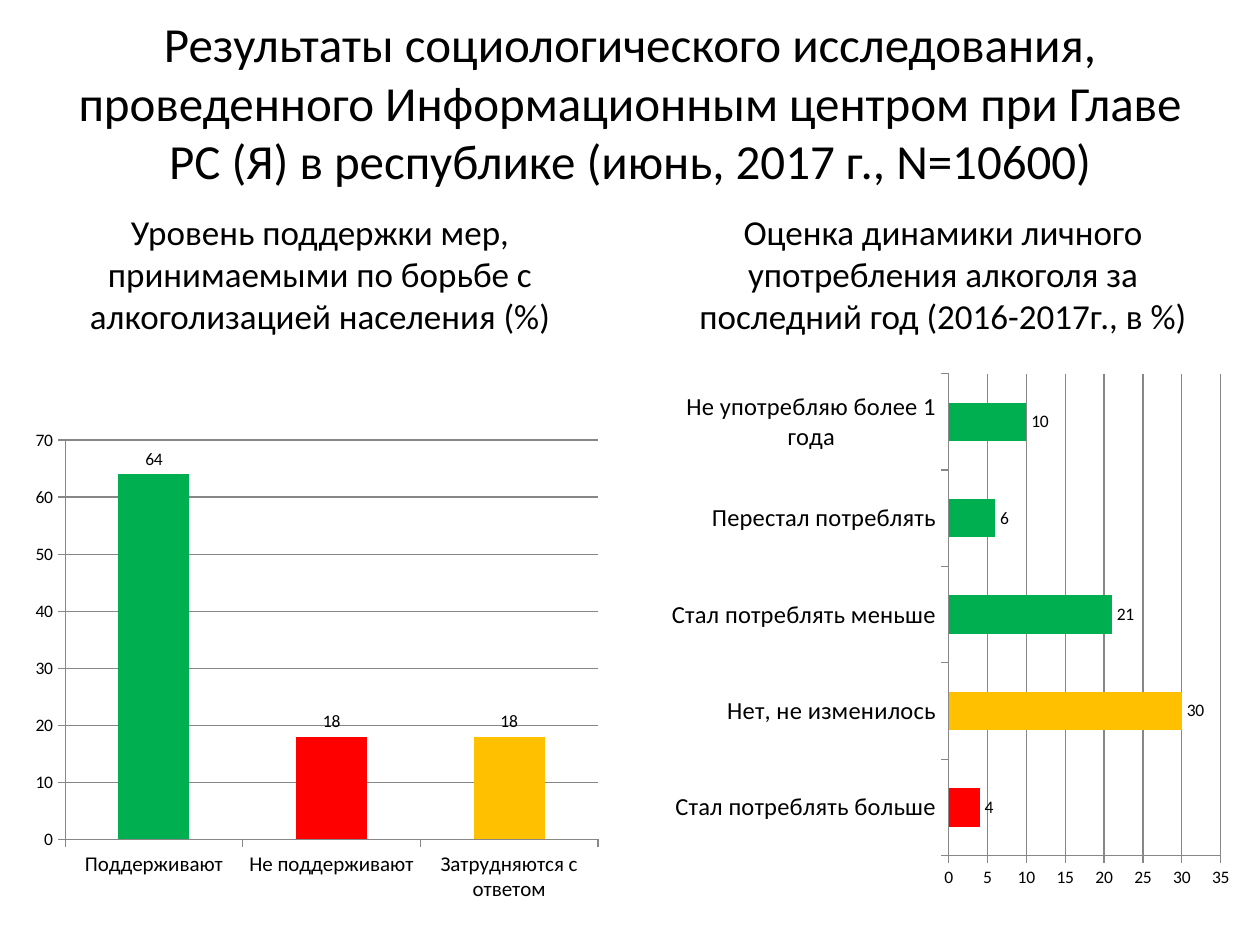
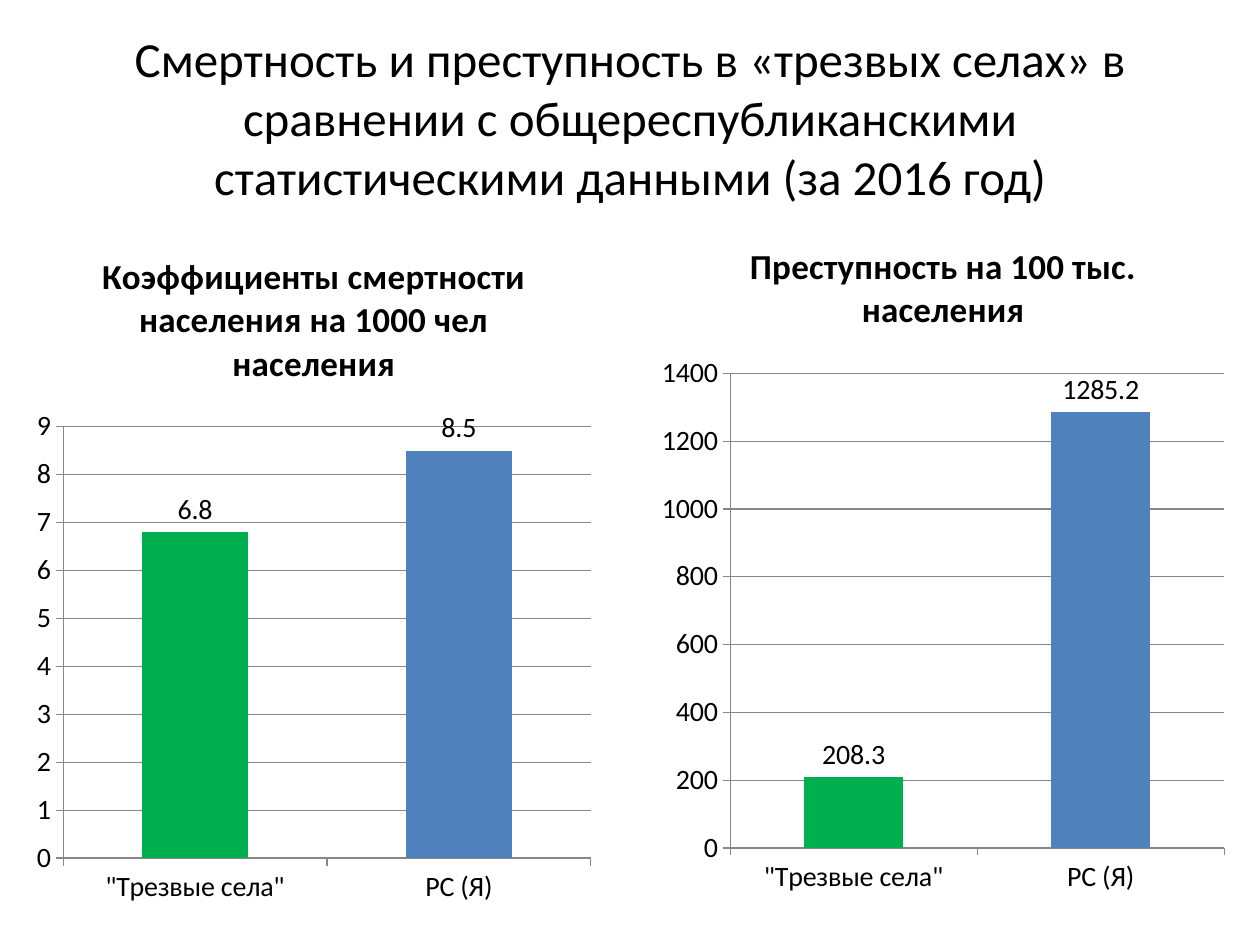
from dataclasses import dataclass

from lxml.etree import SubElement
from pptx import Presentation
from pptx.chart.data import CategoryChartData
from pptx.dml.color import RGBColor
from pptx.enum.chart import XL_CHART_TYPE, XL_LABEL_POSITION, XL_TICK_MARK
from pptx.enum.text import MSO_ANCHOR, MSO_AUTO_SIZE, PP_ALIGN
from pptx.oxml.ns import qn
from pptx.util import Pt


@dataclass(frozen=True)
class Theme:
    font: str = "Calibri"
    text: RGBColor = RGBColor(0, 0, 0)
    background: RGBColor = RGBColor(255, 255, 255)
    grid: RGBColor = RGBColor(0x87, 0x87, 0x87)
    blue: RGBColor = RGBColor(0x4F, 0x81, 0xBD)
    green: RGBColor = RGBColor(0x00, 0xB0, 0x50)
    red: RGBColor = RGBColor(0xFF, 0x00, 0x00)
    amber: RGBColor = RGBColor(0xFF, 0xC0, 0x00)
    title_size: int = 28
    heading_size: int = 20
    comparison_size: int = 16
    survey_size: int = 10
    line_width: float = 0.75


THEME = Theme()
TITLE_LEFT, TITLE_TOP, TITLE_WIDTH = 36, 21.6, 648
HEADING_TOP = 116.6


def style_font(font, size, bold=False):
    font.name = THEME.font
    font.size = Pt(size)
    font.bold = bold
    font.color.rgb = THEME.text


def add_slide(presentation):
    slide = presentation.slides.add_slide(presentation.slide_layouts[6])
    slide.background.fill.solid()
    slide.background.fill.fore_color.rgb = THEME.background
    return slide


def add_text(slide, box, text, size, anchor=MSO_ANCHOR.TOP, space_before=0):
    shape = slide.shapes.add_textbox(*map(Pt, box))
    frame = shape.text_frame
    frame.word_wrap = True
    frame.auto_size = MSO_AUTO_SIZE.NONE
    frame.vertical_anchor = anchor
    paragraph = frame.paragraphs[0]
    paragraph.alignment = PP_ALIGN.CENTER
    paragraph.space_before = Pt(space_before)
    run = paragraph.add_run()
    run.text = text
    style_font(run.font, size)


def add_title(slide, text, height):
    box = (TITLE_LEFT, TITLE_TOP, TITLE_WIDTH, height)
    add_text(slide, box, text, THEME.title_size, MSO_ANCHOR.MIDDLE)


def add_heading(slide, left, width, height, text):
    box = (left, HEADING_TOP, width, height)
    add_text(slide, box, text, THEME.heading_size, space_before=2)


def style_line(line):
    line.color.rgb = THEME.grid
    line.width = Pt(THEME.line_width)


def style_axes(chart, maximum, step, category_size):
    for axis in (chart.category_axis, chart.value_axis):
        axis.major_tick_mark = XL_TICK_MARK.OUTSIDE
        axis.minor_tick_mark = XL_TICK_MARK.NONE
        style_line(axis.format.line)
    style_font(chart.category_axis.tick_labels.font, category_size)
    value_axis = chart.value_axis
    value_axis.minimum_scale = 0
    value_axis.maximum_scale = maximum
    value_axis.major_unit = step
    value_axis.has_major_gridlines = True
    style_line(value_axis.major_gridlines.format.line)


def add_chart_title(chart, text):
    paragraph = chart.chart_title.text_frame.paragraphs[0]
    run = paragraph.add_run()
    run.text = text
    style_font(run.font, THEME.heading_size, bold=True)
    chart.chart_title.include_in_layout = False


def place_plot(chart, left, top, width, height):
    """Fix the inner plot area, in fractions of the chart."""
    plot_area = chart.plots[0]._element.getparent()
    layout = plot_area.find(qn("c:layout"))
    if layout is None:
        layout = SubElement(plot_area, qn("c:layout"))
        plot_area.insert(0, layout)
    manual = SubElement(layout, qn("c:manualLayout"))
    settings = {"layoutTarget": "inner", "xMode": "edge", "yMode": "edge",
                "x": left, "y": top, "w": width, "h": height}
    for name, value in settings.items():
        SubElement(manual, qn(f"c:{name}")).set("val", str(value))


def add_bar_chart(slide, box, bars, maximum, step, size, category_size,
                  kind=XL_CHART_TYPE.COLUMN_CLUSTERED, title=None, series_name="Series 1"):
    """Draw one series; bars holds (category, value, colour)."""
    categories, values, colours = zip(*bars)
    data = CategoryChartData()
    data.categories = categories
    data.add_series(series_name, values)
    chart = slide.shapes.add_chart(kind, *map(Pt, box), data).chart
    style_font(chart.font, size)
    chart.has_legend = False
    chart.has_title = title is not None
    if title:
        add_chart_title(chart, title)
    style_axes(chart, maximum, step, category_size)

    plot = chart.plots[0]
    plot.gap_width = 150
    plot.vary_by_categories = False
    plot.has_data_labels = True
    labels = plot.data_labels
    labels.show_value = True
    labels.position = XL_LABEL_POSITION.OUTSIDE_END
    style_font(labels.font, size)

    series = plot.series[0]
    series.invert_if_negative = False
    series.format.fill.solid()
    series.format.fill.fore_color.rgb = THEME.blue
    for index, colour in enumerate(colours):
        if colour != THEME.blue:
            fill = series.points[index].format.fill
            fill.solid()
            fill.fore_color.rgb = colour
    return chart


def build_survey_slide(presentation):
    slide = add_slide(presentation)
    add_title(slide, "Результаты социологического исследования, проведенного "
              "Информационным центром при Главе РС (Я) в республике "
              "(июнь, 2017 г., N=10600)", 72.7)
    add_heading(slide, 0, 365.8, 86.4,
                "Уровень поддержки мер, принимаемыми по борьбе с "
                "алкоголизацией населения (%)")
    support = [
        ("Поддерживают", 64, THEME.green),
        ("Не поддерживают", 18, THEME.red),
        ("Затрудняются с ответом", 18, THEME.amber),
    ]
    support_chart = add_bar_chart(slide, (14.4, 202.3, 341.3, 317.5), support, 70, 10,
                                  THEME.survey_size, category_size=12)
    place_plot(support_chart, 0.067, 0.155, 0.892, 0.719)

    consumption = [
        ("Стал потреблять больше", 4, THEME.red),
        ("Нет, не изменилось", 30, THEME.amber),
        ("Стал потреблять меньше", 21, THEME.green),
        ("Перестал потреблять", 6, THEME.green),
        ("Не употребляю более 1 года", 10, THEME.green),
    ]
    add_bar_chart(slide, (377.3, 207.4, 331.9, 306), consumption, 35, 5,
                  THEME.survey_size, category_size=14, kind=XL_CHART_TYPE.BAR_CLUSTERED)
    add_heading(slide, 377.3, 323.3, 93.6,
                "Оценка динамики личного употребления алкоголя за "
                "последний год (2016-2017г., в %)")


def build_comparison_slide(presentation):
    slide = add_slide(presentation)
    add_title(slide, "Смертность и преступность в «трезвых селах» в сравнении с "
              "общереспубликанскими статистическими данными (за 2016 год)", 90)
    crime_title = "Преступность на 100 тыс. населения"
    comparisons = [
        ((14.4, 128.2, 329.8, 396.7), (6.8, 8.5), 9, 1,
         "Коэффициенты смертности населения на 1000 чел населения", "Series 1"),
        ((371.5, 122.4, 334.8, 396.7), (208.3, 1285.2), 1400, 200,
         crime_title, crime_title),
    ]
    for box, values, maximum, step, title, series_name in comparisons:
        bars = zip(('"Трезвые села"', "РС (Я)"), values, (THEME.green, THEME.blue))
        add_bar_chart(slide, box, bars, maximum, step, THEME.comparison_size,
                      THEME.comparison_size, title=title, series_name=series_name)


def main():
    presentation = Presentation()
    presentation.slide_width = Pt(720)
    presentation.slide_height = Pt(540)
    build_survey_slide(presentation)
    build_comparison_slide(presentation)
    presentation.save("out.pptx")


if __name__ == "__main__":
    main()
